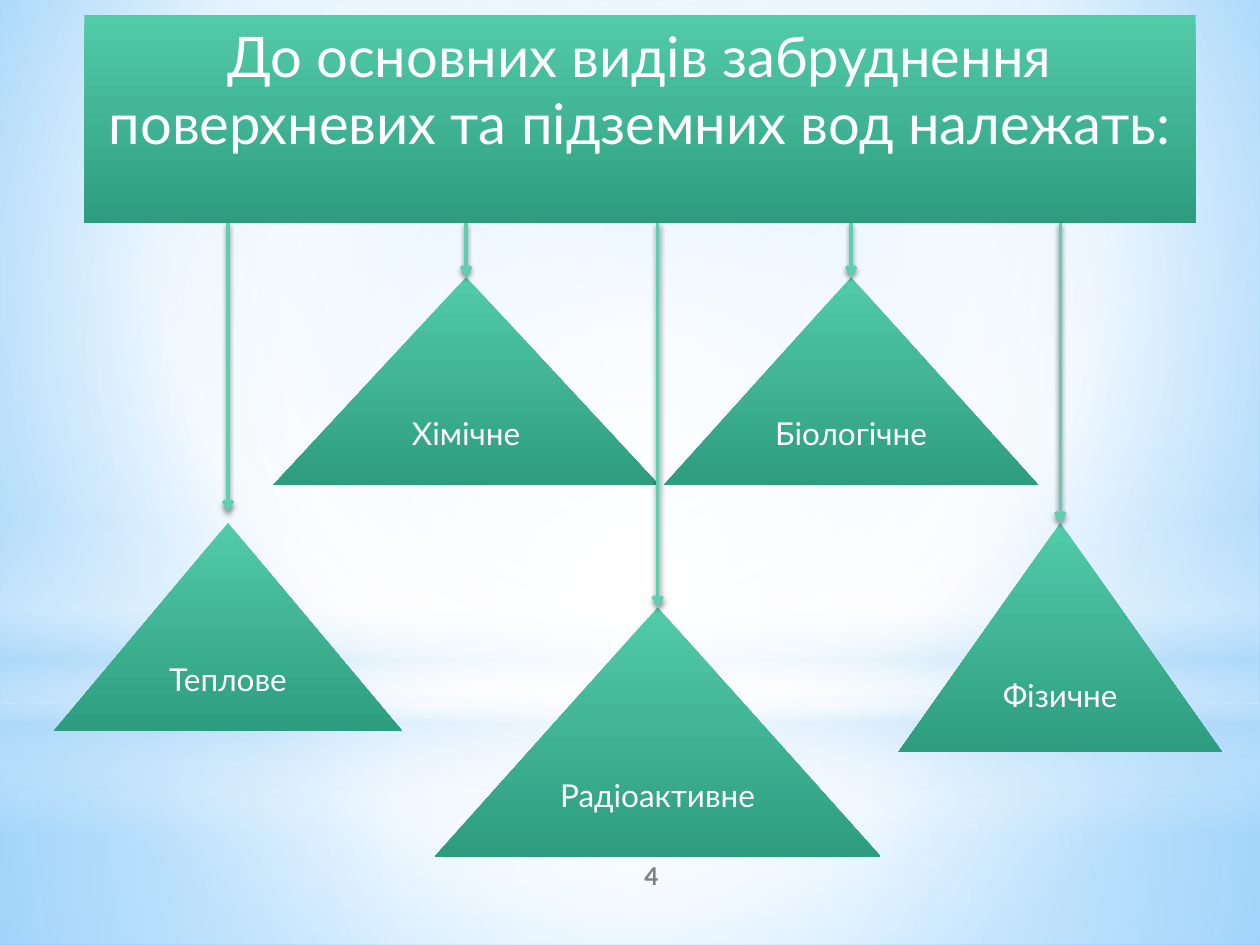
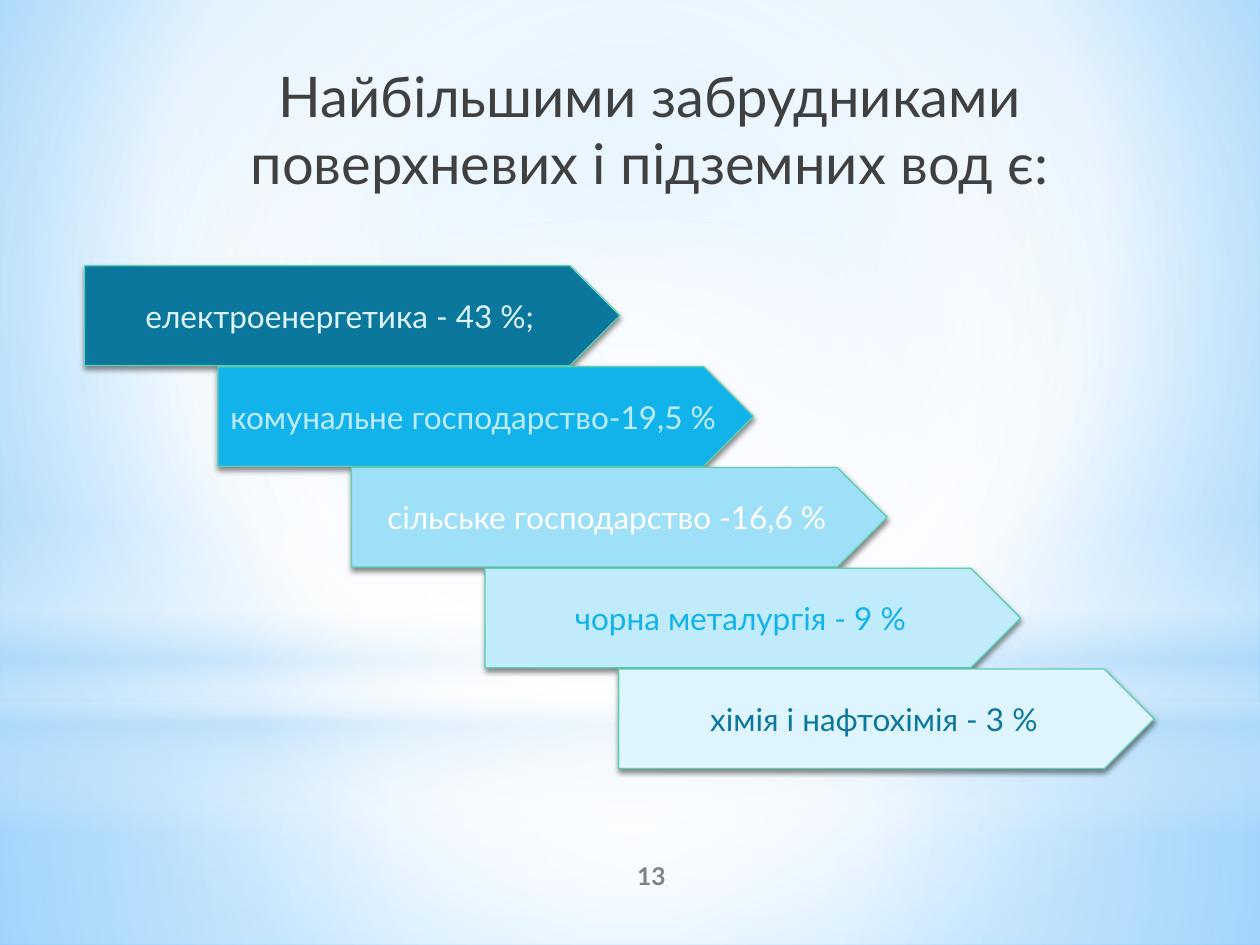
from lxml import etree
from pptx import Presentation
from pptx import util as u
from pptx.dml.color import RGBColor
from pptx.enum import shapes, text
from pptx.oxml.ns import qn

FONT = "Lato"
C = {
    "white": "FFFFFF", "black": "000000", "sky": "B4DCFA",
    "bg_in": "9ED5FF", "bg_out": "5BB9FF",
    "green_top": "52CBA9", "green_bottom": "2E9D7F", "mint": "5DCEAF",
    "title": "404040", "number": "808080",
    "blue1": "0C779D", "blue2": "12B2EB", "blue3": "9EE0F8",
    "blue4": "BFEBFA", "blue5": "DFF5FD",
}
GREEN = [(0, "green_top", 100), (100, "green_bottom", 100)]
CENTER = (50, 50, 50, 50)


def rgb(name):
    return RGBColor.from_string(C[name])


def sub(parent, tag, **attrs):
    return etree.SubElement(parent, qn(tag), {k: str(v) for k, v in attrs.items()})


def add_color(parent, name, alpha):
    clr = sub(parent, "a:srgbClr", val=C[name])
    if alpha < 100:
        sub(clr, "a:alpha", val=alpha * 1000)


def set_gradient(obj, stops, focus=None):
    """Stops are (position, colour, opacity); focus is left, top, right, bottom in %."""
    obj.fill.background()
    owner = obj if hasattr(obj, "element") else prs.slide_master
    none = next(owner.element.iter(qn("a:noFill")))
    grad = etree.Element(qn("a:gradFill"), rotWithShape="1")
    gs_lst = sub(grad, "a:gsLst")
    for pos, name, alpha in stops:
        add_color(sub(gs_lst, "a:gs", pos=pos * 1000), name, alpha)
    if focus:
        sides = {side: value * 1000 for side, value in zip("ltrb", focus)}
        sub(sub(grad, "a:path", path="circle"), "a:fillToRect", **sides)
    else:
        sub(grad, "a:lin", ang=90 * 60000, scaled=0)
    none.getparent().replace(none, grad)


def add_shadow(sp_pr):
    shadow = sub(sub(sp_pr, "a:effectLst"), "a:outerShdw", blurRad=u.Pt(3.1),
                 dist=u.Pt(1.8), dir=90 * 60000, rotWithShape=0)
    add_color(shadow, "black", 45)


def write(sp, words, size, color, bold=False):
    tf = sp.text_frame
    tf.text = words
    p = tf.paragraphs[0]
    p.alignment = text.PP_ALIGN.CENTER
    p.font.name, p.font.size, p.font.bold = FONT, u.Pt(size), bold
    p.font.color.rgb = rgb(color)
    return tf


def add_shape(s, kind, box):
    return s.shapes.add_shape(kind, *map(u.Inches, box))


def add_label_shape(s, kind, box, words, color):
    sp = add_shape(s, kind, box)
    write(sp, words, 18, color).word_wrap = False
    return sp


def add_title(s, box, words, color):
    sp = s.shapes.title
    sp.left, sp.top, sp.width, sp.height = map(u.Inches, box)
    tf = write(sp, words, 32, color)
    tf.word_wrap = True
    tf.auto_size = text.MSO_AUTO_SIZE.NONE
    tf.vertical_anchor = text.MSO_ANCHOR.TOP
    return sp


def add_number(s, number):
    sp = s.shapes.add_textbox(*map(u.Inches, (4.17, 6.75, 2, 0.4)))
    tf = write(sp, str(number), 14, "number", bold=True)
    tf.word_wrap = True
    tf.vertical_anchor = text.MSO_ANCHOR.MIDDLE


def build_backdrop(s):
    """Light washes, drawn on a slide and then moved to the master."""
    master = prs.slide_master
    set_gradient(master.background, [(0, "bg_in", 100), (60, "white", 100),
                                     (100, "bg_out", 100)], (20, 10, 20, 60))
    rect, oval = shapes.MSO_SHAPE.RECTANGLE, shapes.MSO_SHAPE.OVAL
    washes = [
        (rect, 5.58, 1.92, CENTER,
         [(0, "white", 91), (37, "white", 76), (100, "sky", 79)]),
        (rect, 0, 5.58, CENTER,
         [(0, "white", 89), (48, "white", 62), (100, "sky", 79)]),
        (rect, 4.12, 2.5, None,
         [(0, "white", 0), (29, "white", 30), (45, "sky", 40),
          (55, "white", 26), (65, "sky", 60), (100, "white", 0)]),
        (oval, 1.75, 5.58, CENTER, [(0, "white", 100), (56, "white", 0)]),
    ]
    tree = master.element.cSld.spTree
    for i, (kind, top, height, focus, stops) in enumerate(washes):
        sp = add_shape(s, kind, (0, top, 10, height))
        set_gradient(sp, stops, focus)
        sp.line.fill.background()
        sp.shadow.inherit = False
        tree.insert(2 + i, sp.element)


def add_triangle(s, box, words):
    sp = add_label_shape(s, shapes.MSO_SHAPE.ISOSCELES_TRIANGLE, box, words, "white")
    set_gradient(sp, GREEN)
    sp.line.fill.background()
    sp.shadow.inherit = False
    return sp


def add_arrow(s, banner, triangle, gap):
    x = triangle.left + triangle.width // 2
    cn = s.shapes.add_connector(shapes.MSO_CONNECTOR.STRAIGHT, x,
                                banner.top + banner.height, x,
                                triangle.top - u.Inches(gap))
    if not gap:
        cn.end_connect(triangle, 0)
    cn.line.color.rgb = rgb("mint")
    cn.line.width = u.Pt(2)
    sp_pr = cn.element.spPr
    sub(sp_pr.find(qn("a:ln")), "a:tailEnd", type="arrow")
    add_shadow(sp_pr)


def build_kinds(s):
    """Banner with an arrow down to each kind of pollution."""
    banner = add_title(s, (0.67, 0.12, 8.82, 1.65),
                       "До основних видів забруднення поверхневих "
                       "та підземних вод належать:", "white")
    set_gradient(banner, GREEN)
    kinds = [  # label, box, gap between arrow and tip
        ("Хімічне", (2.17, 2.2, 3.06, 1.65), 0),
        ("Біологічне", (5.27, 2.2, 2.97, 1.65), 0),
        ("Теплове", (0.43, 4.15, 2.76, 1.65), 0.09),
        ("Фізичне", (7.13, 4.15, 2.57, 1.82), 0),
        ("Радіоактивне", (3.45, 4.82, 3.54, 1.98), 0),
    ]
    triangles = [add_triangle(s, box, words) for words, box, _ in kinds]
    for triangle, (_, _, gap) in zip(triangles, kinds):
        add_arrow(s, banner, triangle, gap)
    add_number(s, 4)


def build_polluters(s):
    """Staircase of pentagon arrows."""
    add_title(s, (1.46, 0.44, 7.4, 1.41),
              "Найбільшими забрудниками поверхневих і підземних вод є:", "title")
    left, top, step_x, step_y = 0.67, 2.11, 1.06, 0.8
    polluters = [
        ("електроенергетика - 43 %;", "blue1", "blue5"),
        ("комунальне господарство-19,5 %", "blue2", "blue4"),
        ("сільське господарство -16,6 %", "blue3", "white"),
        ("чорна металургія - 9 %", "blue4", "blue2"),
        ("хімія і нафтохімія - 3 %", "blue5", "blue1"),
    ]
    for i, (words, fill, color) in enumerate(polluters):
        box = (left + i * step_x, top + i * step_y, 4.25, 0.79)
        sp = add_label_shape(s, shapes.MSO_SHAPE.PENTAGON, box, words, color)
        sp.fill.solid()
        sp.fill.fore_color.rgb = rgb(fill)
        sp.line.color.rgb = rgb("mint")
        sp.line.width = u.Pt(0.75)
        add_shadow(sp.element.spPr)
    add_number(s, 13)


prs = Presentation()
prs.slide_width, prs.slide_height = u.Inches(10), u.Inches(7.5)
title_only = prs.slide_layouts[5]
kinds_slide, polluters_slide = (prs.slides.add_slide(title_only) for _ in range(2))
build_backdrop(kinds_slide)
build_kinds(kinds_slide)
build_polluters(polluters_slide)
prs.save("out.pptx")
